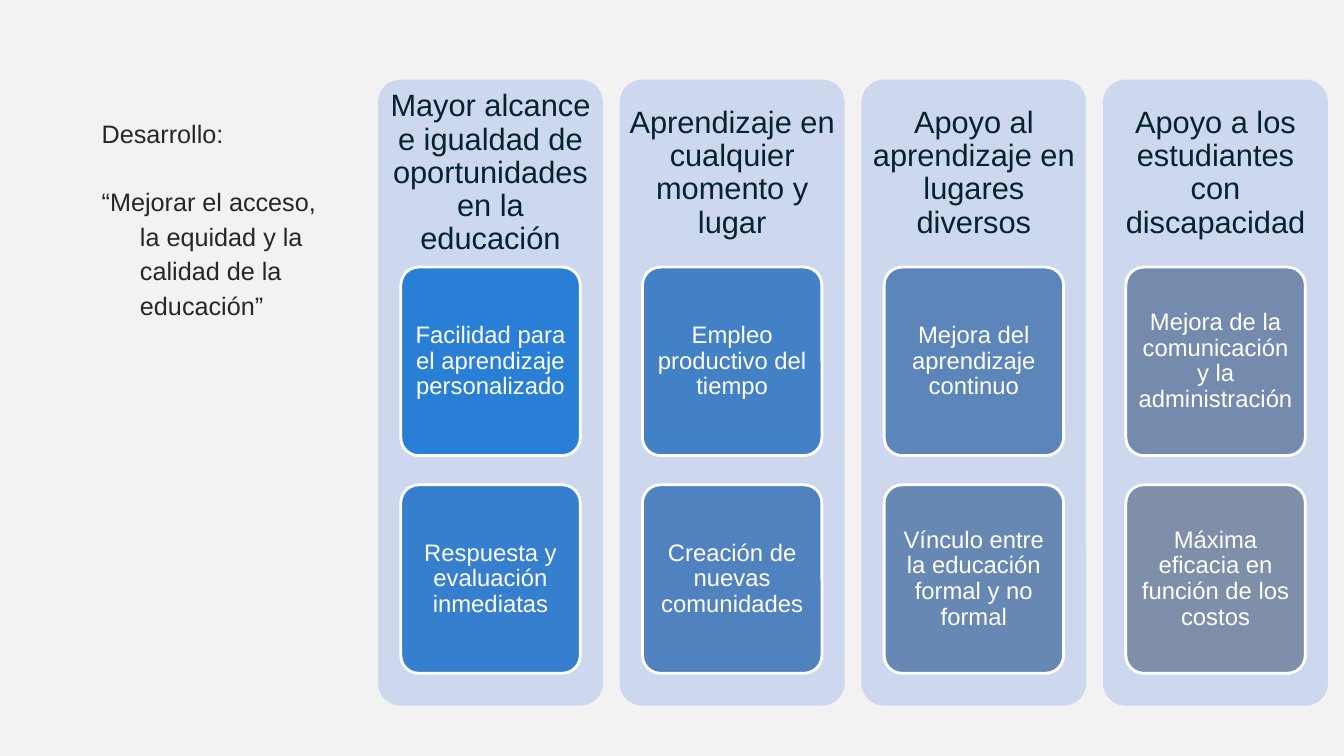
from pptx import Presentation
from pptx.dml.color import RGBColor
from pptx.enum.shapes import MSO_SHAPE
from pptx.enum.text import MSO_ANCHOR, PP_ALIGN
from pptx.util import Inches, Pt

BACKGROUND = RGBColor(0xF2, 0xF2, 0xF2)
PANEL = RGBColor(0xCD, 0xD8, 0xEF)
HEADING = RGBColor(0x05, 0x23, 0x2C)
BODY = RGBColor(0x26, 0x26, 0x26)
WHITE = RGBColor(0xFF, 0xFF, 0xFF)
FONT = "Arial"

INTRO = ["Desarrollo:", "“Mejorar el acceso, la equidad y la calidad de la educación”"]
COLUMNS = [
    ("Mayor alcance e igualdad de oportunidades en la educación", [
        ("Facilidad para el aprendizaje personalizado", RGBColor(0x29, 0x7F, 0xD5)),
        ("Respuesta y evaluación inmediatas", RGBColor(0x36, 0x7F, 0xCE))]),
    ("Aprendizaje en cualquier momento y lugar", [
        ("Empleo productivo del tiempo", RGBColor(0x43, 0x81, 0xC7)),
        ("Creación de nuevas comunidades", RGBColor(0x50, 0x82, 0xC0))]),
    ("Apoyo al aprendizaje en lugares diversos", [
        ("Mejora del aprendizaje continuo", RGBColor(0x5C, 0x85, 0xBA)),
        ("Vínculo entre la educación formal y no formal", RGBColor(0x68, 0x88, 0xB4))]),
    ("Apoyo a los estudiantes con discapacidad", [
        ("Mejora de la comunicación y la administración", RGBColor(0x74, 0x8B, 0xAE)),
        ("Máxima eficacia en función de los costos", RGBColor(0x7F, 0x8F, 0xA9))]),
]

PANEL_LEFT, PANEL_TOP, PANEL_WIDTH, PANEL_HEIGHT = 3.75, 0.79, 2.23, 6.21
COLUMN_STEP = 2.397
HEADING_HEIGHT = 1.86
CARD_TOP, CARD_WIDTH, CARD_HEIGHT, CARD_STEP = 2.65, 1.78, 1.87, 2.16
CARD_INDENT = (PANEL_WIDTH - CARD_WIDTH) / 2


def set_font(paragraph, size, color):
    paragraph.font.name = FONT
    paragraph.font.size = Pt(size)
    paragraph.font.color.rgb = color


def write_centred(shape, text, size, color, inset_x, inset_y):
    frame = shape.text_frame
    frame.word_wrap = True
    frame.vertical_anchor = MSO_ANCHOR.MIDDLE
    frame.margin_left = frame.margin_right = Inches(inset_x)
    frame.margin_top = frame.margin_bottom = Inches(inset_y)
    paragraph = frame.paragraphs[0]
    paragraph.text = text
    paragraph.alignment = PP_ALIGN.CENTER
    paragraph.line_spacing = 0.9
    set_font(paragraph, size, color)


def add_rounded(slide, left, top, width, height, color):
    shape = slide.shapes.add_shape(
        MSO_SHAPE.ROUNDED_RECTANGLE,
        Inches(left), Inches(top), Inches(width), Inches(height))
    shape.adjustments[0] = 0.1
    shape.shadow.inherit = False
    shape.fill.solid()
    shape.fill.fore_color.rgb = color
    shape.line.fill.background()
    return shape


def add_intro(slide):
    box = slide.shapes.add_textbox(Inches(0.91), Inches(1.08), Inches(2.58), Inches(5.33))
    frame = box.text_frame
    frame.word_wrap = True
    for index, text in enumerate(INTRO):
        paragraph = frame.add_paragraph() if index else frame.paragraphs[0]
        paragraph.text = text
        paragraph.line_spacing = 1.15
        paragraph.space_before = Pt(23.7 if index else 0)
        set_font(paragraph, 18, BODY)
        properties = paragraph._p.get_or_add_pPr()
        properties.set("marL", str(Inches(0.38)))
        properties.set("indent", str(Inches(-0.38)))


def add_column(slide, left, heading, cards):
    add_rounded(slide, left, PANEL_TOP, PANEL_WIDTH, PANEL_HEIGHT, PANEL)
    box = slide.shapes.add_textbox(
        Inches(left), Inches(PANEL_TOP), Inches(PANEL_WIDTH), Inches(HEADING_HEIGHT))
    write_centred(box, heading, 22, HEADING, 0.09, 0.09)
    for row, (text, color) in enumerate(cards):
        card = add_rounded(slide, left + CARD_INDENT, CARD_TOP + row * CARD_STEP,
                           CARD_WIDTH, CARD_HEIGHT, color)
        card.line.color.rgb = WHITE
        card.line.width = Pt(2)
        write_centred(card, text, 17, WHITE, 0.05, 0.04)


def main():
    presentation = Presentation()
    presentation.slide_width = Inches(13.33)
    presentation.slide_height = Inches(7.5)
    slide = presentation.slides.add_slide(presentation.slide_layouts[6])
    slide.background.fill.solid()
    slide.background.fill.fore_color.rgb = BACKGROUND
    add_intro(slide)
    for index, (heading, cards) in enumerate(COLUMNS):
        add_column(slide, PANEL_LEFT + index * COLUMN_STEP, heading, cards)
    presentation.save("out.pptx")


if __name__ == "__main__":
    main()
